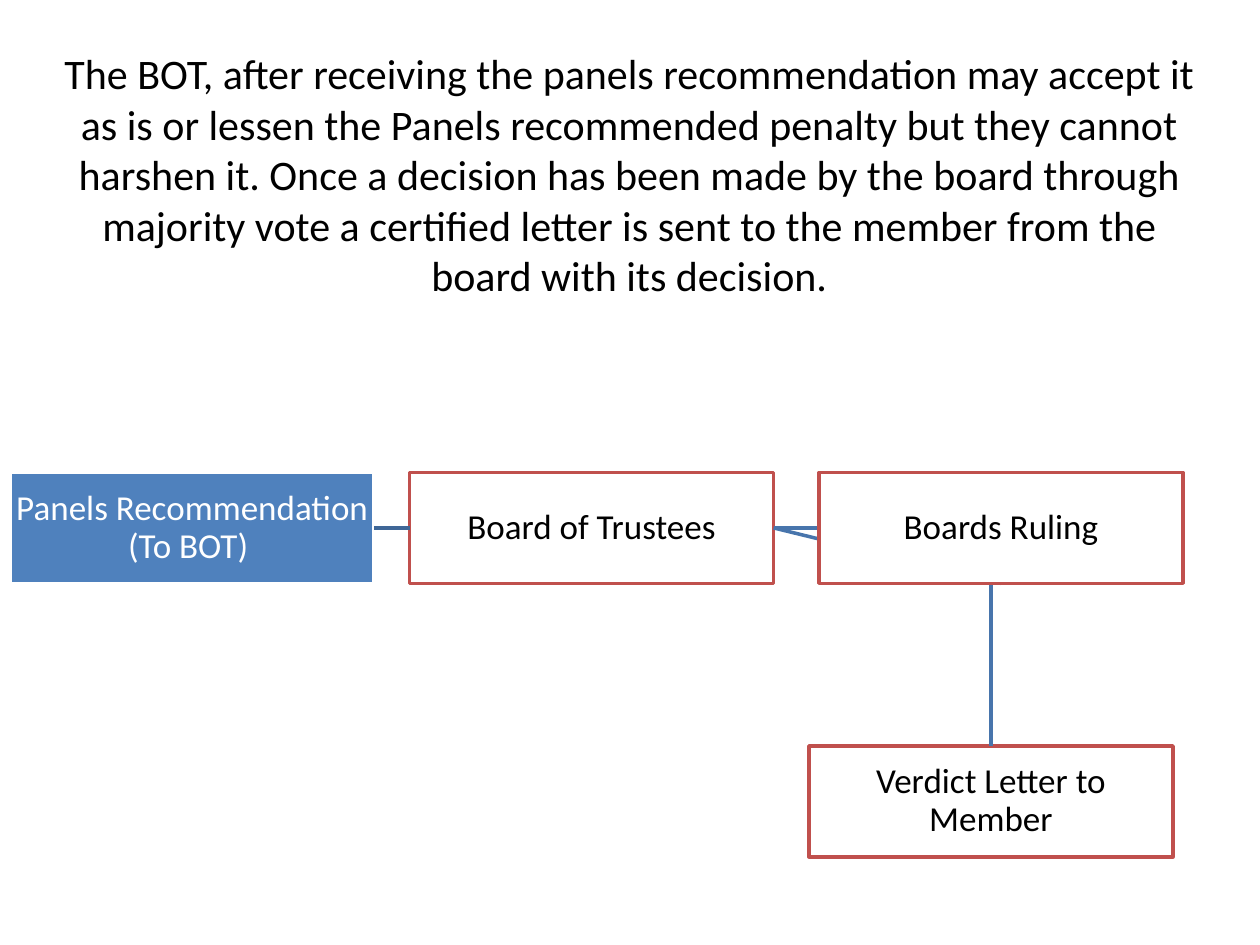
from dataclasses import dataclass
from lxml.etree import SubElement
from pptx import Presentation
from pptx.dml.color import RGBColor
from pptx.enum.shapes import MSO_CONNECTOR, MSO_SHAPE
from pptx.enum.text import MSO_ANCHOR, MSO_AUTO_SIZE, PP_ALIGN
from pptx.oxml.ns import qn
from pptx.util import Inches, Pt


@dataclass(frozen=True)
class Theme:
    font: str = "Calibri"
    title_size: int = 24
    box_size: int = 20
    line_width: int = 2
    black: str = "000000"
    white: str = "FFFFFF"
    blue: str = "4F81BD"
    red: str = "C0504D"
    link: str = "4875AC"
    first_link: str = "3F6797"


THEME = Theme()
LEFT, TOP = 0.08, 3.75
BOX_W, BOX_H = 2.89, 0.88
COL_STEP, ROW_STEP = 3.17, 2.17


def rgb(code):
    return RGBColor.from_string(code)


def style_text(tf, size, color):
    tf.word_wrap = True
    for p in tf.paragraphs:
        p.alignment = PP_ALIGN.CENTER
        for r in p.runs:
            r.font.name = THEME.font
            r.font.size = Pt(size)
            r.font.color.rgb = rgb(color)


def style_line(line, color):
    line.color.rgb = rgb(color)
    line.width = Pt(THEME.line_width)


def add_title(s, text):
    title = s.shapes.title
    title.left, title.top = Inches(0.33), Inches(0.33)
    title.width, title.height = Inches(9.33), Inches(2.12)
    tf = title.text_frame
    tf.text = text
    tf.vertical_anchor = MSO_ANCHOR.TOP
    tf.auto_size = MSO_AUTO_SIZE.SHAPE_TO_FIT_TEXT
    style_text(tf, THEME.title_size, THEME.black)


def add_box(s, text, col, row=0, shift=0, fill=THEME.white,
            outline=THEME.red, color=THEME.black):
    sp = s.shapes.add_shape(
        MSO_SHAPE.RECTANGLE,
        Inches(LEFT + col * COL_STEP + shift), Inches(TOP + row * ROW_STEP),
        Inches(BOX_W), Inches(BOX_H))
    sp.shadow.inherit = False
    sp.fill.solid()
    sp.fill.fore_color.rgb = rgb(fill)
    style_line(sp.line, outline)
    tf = sp.text_frame
    tf.text = text
    tf.vertical_anchor = MSO_ANCHOR.MIDDLE
    tf.margin_left = tf.margin_right = Inches(0.03)
    tf.margin_top = tf.margin_bottom = Inches(0.01)
    tf.paragraphs[0].line_spacing = 0.9
    style_text(tf, THEME.box_size, color)
    return sp


def add_link(s, start, color):
    link = s.shapes.add_connector(MSO_CONNECTOR.STRAIGHT, 0, 0, 0, 0)
    link.begin_connect(start, 3)
    style_line(link.line, color)
    SubElement(link.element.spPr, qn("a:effectLst"))
    return link


def add_elbow(s, start, end, color):
    x, y = start.left + start.width, start.top + start.height // 2
    corner = end.left + end.width // 2
    builder = s.shapes.build_freeform(x, y)
    builder.add_line_segments([(corner, y), (corner, end.top)], close=False)
    sp = builder.convert_to_shape()
    sp.shadow.inherit = False
    sp.fill.background()
    style_line(sp.line, color)


def main():
    prs = Presentation()
    prs.slide_width, prs.slide_height = Inches(10), Inches(7.5)
    s = prs.slides.add_slide(prs.slide_layouts[5])
    add_title(s, "The BOT, after receiving the panels recommendation may accept "
                 "it as is or lessen the Panels recommended penalty but they "
                 "cannot harshen it. Once a decision has been made by the board "
                 "through majority vote a certified letter is sent to the member "
                 "from the board with its decision.")
    panel = add_box(s, "Panels Recommendation (To BOT) ", 0, fill=THEME.blue,
                    outline=THEME.white, color=THEME.white)
    trustees = add_box(s, "Board of Trustees", 1)
    verdict = add_box(s, "Verdict Letter to Member", 2, row=1)
    add_link(s, panel, THEME.first_link).end_connect(trustees, 1)
    add_elbow(s, trustees, verdict, THEME.link)
    ruling_link = add_link(s, trustees, THEME.link)
    ruling = add_box(s, "Boards Ruling", 2, shift=0.08)
    ruling_link.end_connect(ruling, 2)
    prs.save("out.pptx")


if __name__ == "__main__":
    main()
